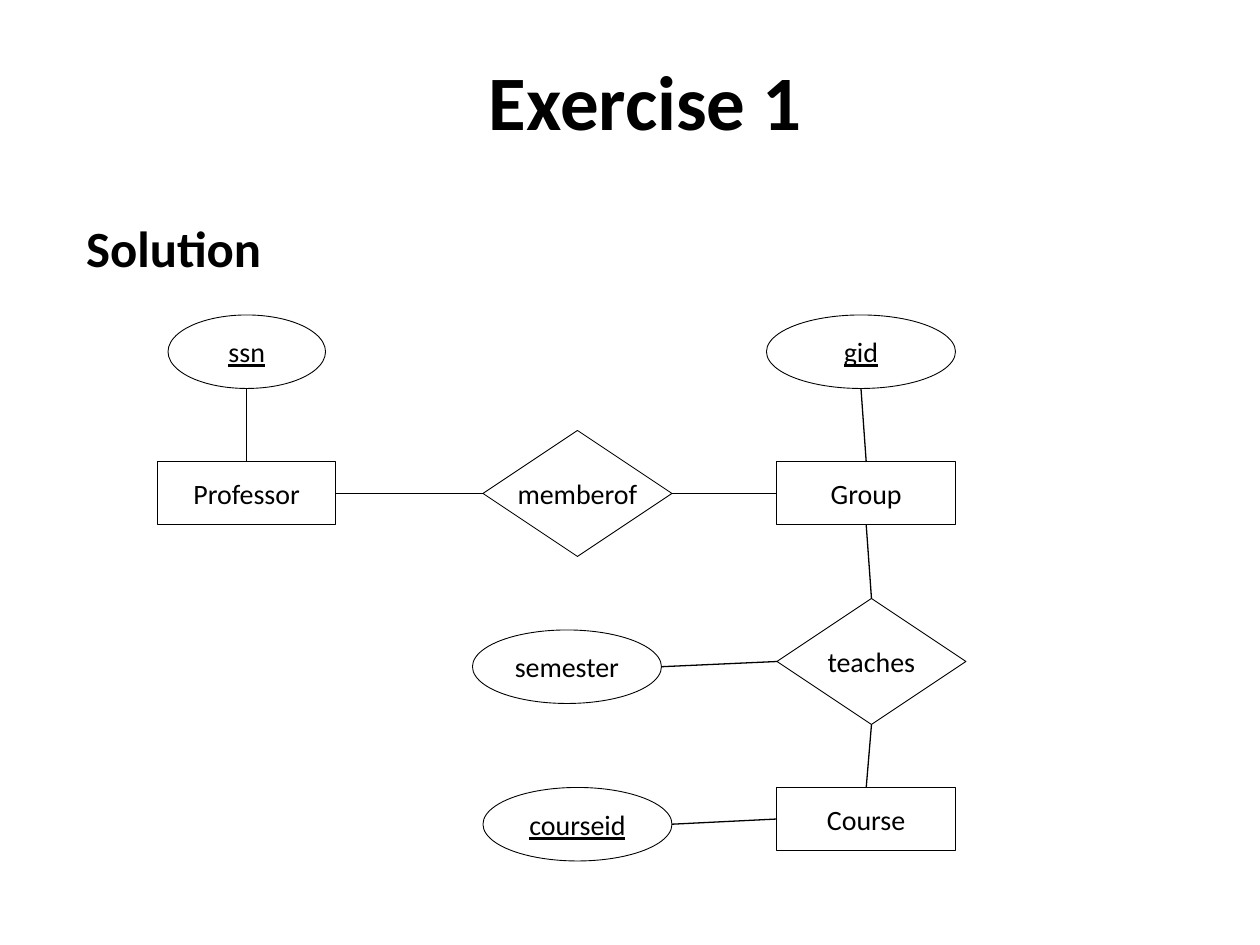
"""Build the Exercise 1 slide: an entity-relationship diagram of professors, groups and courses."""
from dataclasses import dataclass

from lxml import etree
from pptx import Presentation
from pptx import util as u
from pptx.dml.color import RGBColor
from pptx.enum import shapes, text
from pptx.oxml.ns import qn

BLACK = RGBColor(0, 0, 0)
WHITE = RGBColor(255, 255, 255)
EMU_PER_PX = 914400 // 120
RECT = shapes.MSO_SHAPE.RECTANGLE
OVAL = shapes.MSO_SHAPE.OVAL
DIAMOND = shapes.MSO_SHAPE.DIAMOND
SIZES = {RECT: (170, 60), OVAL: (180, 70), DIAMOND: (180, 120)}
FRAME = {"word_wrap": True, "auto_size": text.MSO_AUTO_SIZE.NONE}
MIDDLE = {**FRAME, "vertical_anchor": text.MSO_ANCHOR.MIDDLE}
TIGHT = {**MIDDLE, "word_wrap": False, "margin_left": 0, "margin_right": 0}
CENTER = {"alignment": text.PP_ALIGN.CENTER}


def px(n: int) -> int:
    return u.Emu(n * EMU_PER_PX)


def assign(obj, values: dict) -> None:
    for name, value in values.items():
        setattr(obj, name, value)


@dataclass(frozen=True)
class Node:
    label: str
    kind: int
    x: int
    y: int
    key: bool = False
    width: int = 0

    @property
    def size(self) -> tuple[int, int]:
        w, h = SIZES[self.kind]
        return self.width or w, h

    def side(self, name: str) -> tuple[int, int]:
        w, h = self.size
        dx, dy = {"top": (w // 2, 0), "left": (0, h // 2),
                  "bottom": (w // 2, h), "right": (w, h // 2)}[name]
        return self.x + dx, self.y + dy


@dataclass(frozen=True)
class Link:
    start: str
    start_side: str
    end: str
    end_side: str


NODES = [
    Node("Professor", RECT, 150, 440),
    Node("memberof", DIAMOND, 460, 410),
    Node("ssn", OVAL, 160, 300, key=True, width=150),
    Node("Group", RECT, 740, 440),
    Node("courseid", OVAL, 460, 750, key=True),
    Node("teaches", DIAMOND, 740, 570),
    Node("Course", RECT, 740, 750),
    Node("semester", OVAL, 450, 600),
    Node("gid", OVAL, 730, 300, key=True),
]
LINKS = [
    Link("Professor", "top", "ssn", "bottom"),
    Link("memberof", "right", "Group", "left"),
    Link("memberof", "left", "Professor", "right"),
    Link("Group", "bottom", "teaches", "top"),
    Link("teaches", "bottom", "Course", "top"),
    Link("courseid", "right", "Course", "left"),
    Link("semester", "right", "teaches", "left"),
    Link("gid", "bottom", "Group", "top"),
]


def write(tf, words: str, size: int, frame: dict, para: dict, font: dict):
    assign(tf, frame)
    p = tf.paragraphs[0]
    assign(p, para)
    r = p.add_run()
    r.text = words
    assign(r.font, {"name": "Calibri", "size": u.Pt(size), **font})
    r.font.color.rgb = BLACK
    return p


def place(sp, x: int, y: int, w: int, h: int) -> None:
    assign(sp, {"left": px(x), "top": px(y), "width": px(w), "height": px(h)})


def draw_node(s, node: Node) -> None:
    w, h = node.size
    sp = s.shapes.add_shape(node.kind, px(node.x), px(node.y), px(w), px(h))
    sp.shadow.inherit = False
    sp.fill.solid()
    sp.fill.fore_color.rgb = WHITE
    sp.line.color.rgb = BLACK
    sp.line.width = u.Pt(0.5)
    frame = MIDDLE if node.kind == RECT else TIGHT
    if node.kind == DIAMOND:
        frame = {**TIGHT, "margin_top": 0, "margin_bottom": 0}
    write(sp.text_frame, node.label, 16, frame, CENTER, {"underline": node.key})


def draw_link(s, link: Link, nodes: dict[str, Node]) -> None:
    ends = nodes[link.start].side(link.start_side) + nodes[link.end].side(link.end_side)
    line = s.shapes.add_connector(shapes.MSO_CONNECTOR.STRAIGHT, *map(px, ends))
    line.line.color.rgb = BLACK
    line.line.width = u.Pt(0.75)
    etree.SubElement(line._element.spPr, qn("a:effectLst"))


def main() -> None:
    prs = Presentation()
    assign(prs, {"slide_width": px(1200), "slide_height": px(900)})
    s = prs.slides.add_slide(prs.slide_layouts[1])

    title, body = s.placeholders
    place(title, 80, 30, 1070, 130)
    write(title.text_frame, "Exercise 1", 44, MIDDLE, CENTER, {"bold": True})
    place(body, 70, 200, 1080, 340)
    p = write(body.text_frame, "Solution", 29, FRAME, {"space_before": u.Pt(7)}, {"bold": True})
    pPr = p._p.get_or_add_pPr()
    pPr.set("marL", str(px(42)))
    pPr.set("indent", str(-px(42)))
    etree.SubElement(pPr, qn("a:buNone"))

    nodes = {node.label: node for node in NODES}
    for node in NODES:
        draw_node(s, node)
    for link in LINKS:
        draw_link(s, link, nodes)
    prs.save("out.pptx")


if __name__ == "__main__":
    main()
